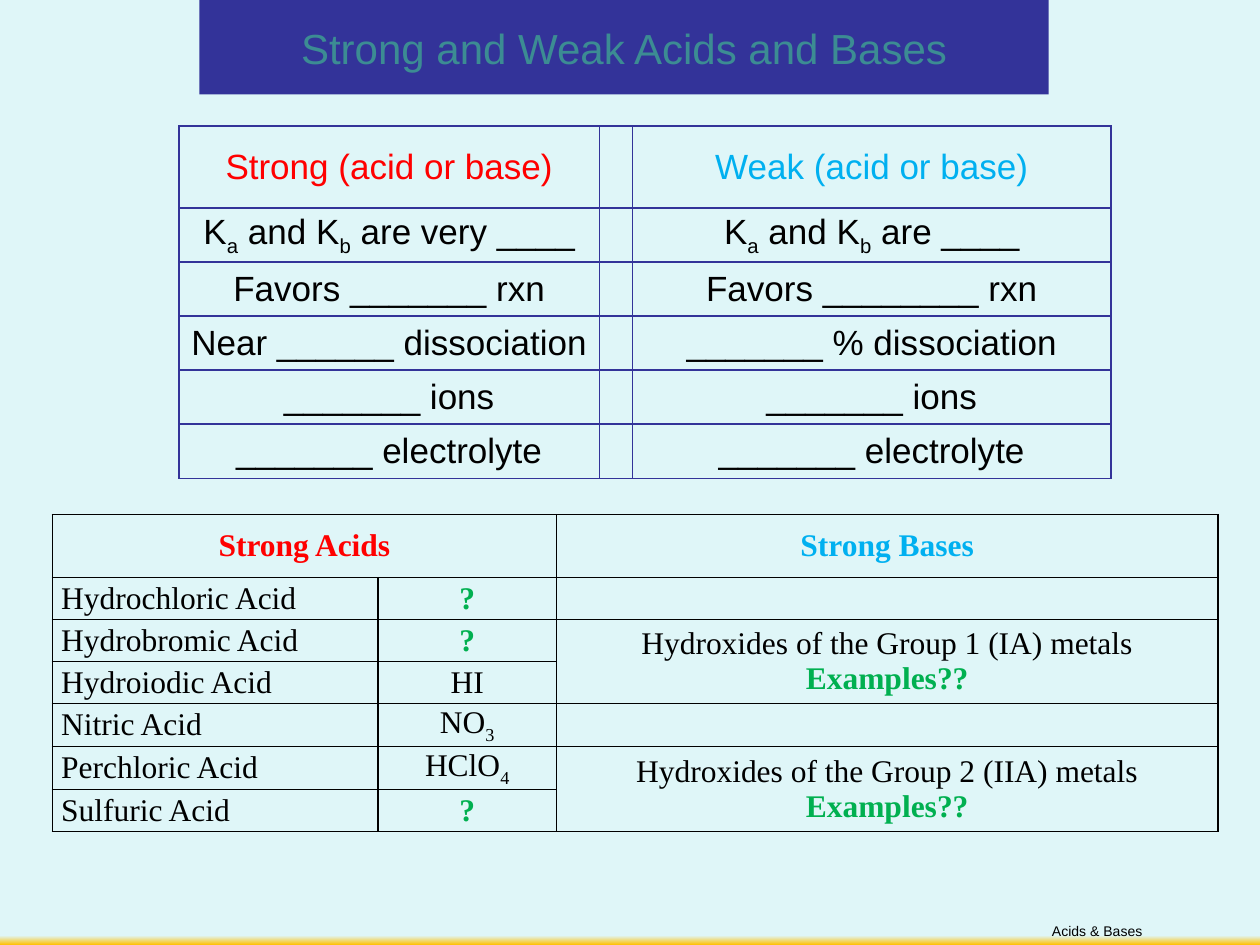
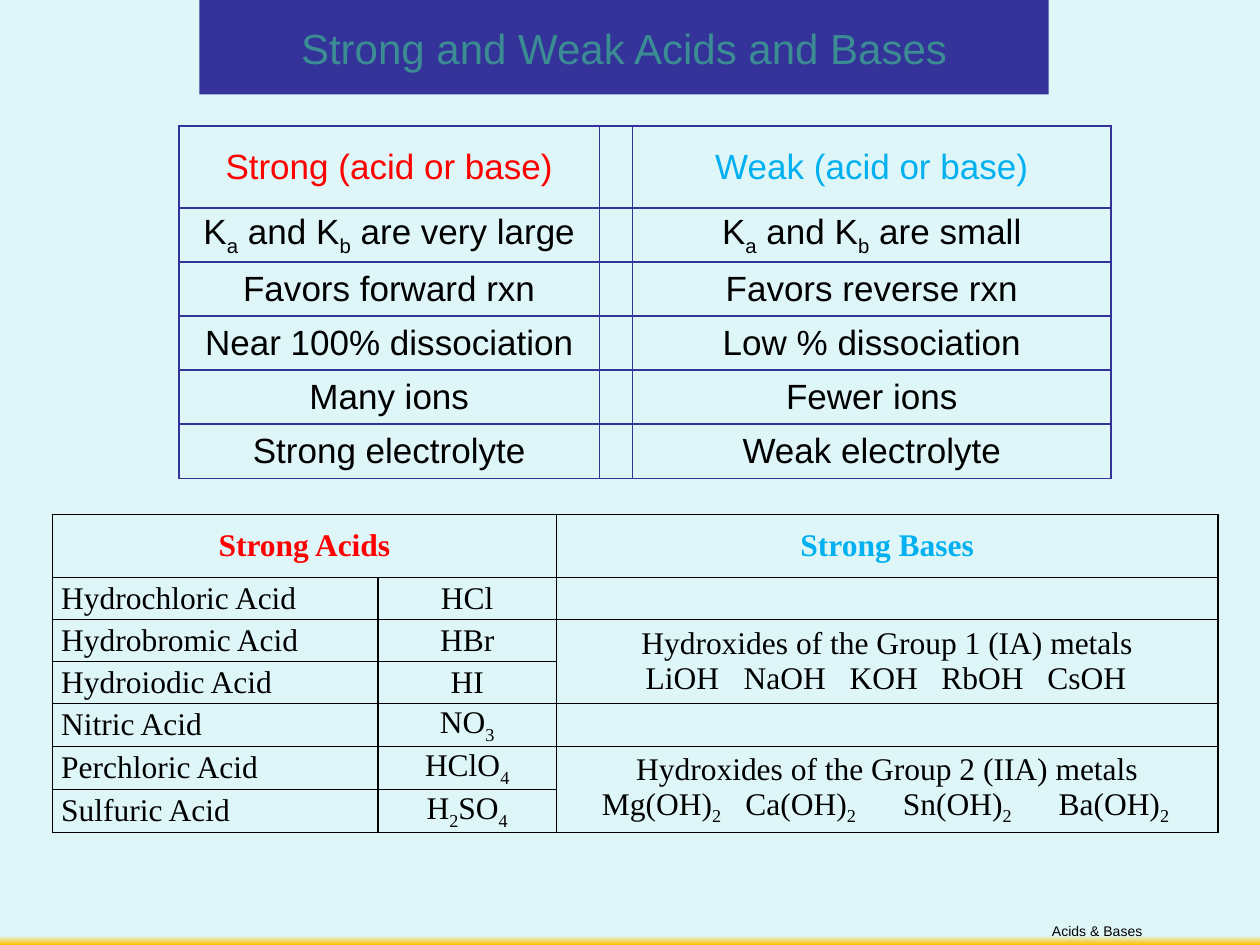
from lxml import etree
from pptx import Presentation
from pptx.dml.color import RGBColor
from pptx.enum.shapes import MSO_SHAPE
from pptx.enum.text import MSO_ANCHOR, PP_ALIGN
from pptx.oxml import parse_xml
from pptx.oxml.ns import nsdecls, qn
from pptx.util import Pt

BLACK, NAVY, TEAL = "000000", "333399", "3C8C93"
RED, BLUE, GREEN = "FF0000", "00B0F0", "00B050"
SANS, SERIF = "Arial", "Times New Roman"
rgb = RGBColor.from_string


def write_line(paragraph, text, font, size, color, align=PP_ALIGN.CENTER, bold=False, tabs=()):
    """Write one line; parts between bars are subscripts."""
    paragraph.alignment = align
    if tabs:
        tab_list = etree.SubElement(paragraph._p.get_or_add_pPr(), qn("a:tabLst"))
        for position in tabs:
            etree.SubElement(tab_list, qn("a:tab"), pos=str(Pt(position)), algn="l")
    paragraph.font.name = font
    paragraph.font.size = Pt(size)
    paragraph.font.bold = bold
    paragraph.font.color.rgb = rgb(color)
    for index, part in enumerate(text.split("|")):
        if part:
            run = paragraph.add_run()
            run.text = part
            if index % 2:
                run._r.get_or_add_rPr().set("baseline", "-25000")


def add_grid(slide, left, top, widths, heights, line_color):
    """Add an unfilled table with thin lines round every cell."""
    table = slide.shapes.add_table(len(heights), len(widths), Pt(left), Pt(top),
                                   Pt(sum(widths)), Pt(sum(heights))).table
    table.first_row = table.horz_banding = False
    for column, width in zip(table.columns, widths):
        column.width = Pt(width)
    for row, height in zip(table.rows, heights):
        row.height = Pt(height)
    for cell in table.iter_cells():
        cell.vertical_anchor = MSO_ANCHOR.MIDDLE
        cell.margin_left = cell.margin_right = Pt(5)
        cell.margin_top = cell.margin_bottom = 0
        for side in ("lnL", "lnR", "lnT", "lnB"):
            cell._tc.get_or_add_tcPr().append(parse_xml(
                f'<a:{side} {nsdecls("a")} w="{Pt(1)}"><a:solidFill>'
                f'<a:srgbClr val="{line_color}"/></a:solidFill></a:{side}>'))
        cell.fill.background()
    return table


# Wording: comparison rows, acid formulas and base examples with their tab stops
acids = ["Hydrochloric Acid", "Hydrobromic Acid", "Hydroiodic Acid",
         "Nitric Acid", "Perchloric Acid", "Sulfuric Acid"]
base_groups = [(2, "Hydroxides of the Group 1 (IA) metals"),
               (5, "Hydroxides of the Group 2 (IIA) metals")]
questions = {
    "comparison": [("K|a| and K|b| are very ____", "K|a| and K|b| are ____"),
                   ("Favors _______ rxn", "Favors ________ rxn"),
                   ("Near ______ dissociation", "_______ % dissociation"),
                   ("_______ ions", "_______ ions"),
                   ("_______ electrolyte", "_______ electrolyte")],
    "formulas": ["?", "?", "HI", "NO|3|", "HClO|4|", "?"],
    "bases": [("Examples??", ()), ("Examples??", ())],
}
answers = {
    "comparison": [("K|a| and K|b| are very large", "K|a| and K|b| are small"),
                   ("Favors forward rxn", "Favors reverse rxn"),
                   ("Near 100% dissociation", "Low % dissociation"),
                   ("Many ions", "Fewer ions"),
                   ("Strong electrolyte", "Weak electrolyte")],
    "formulas": ["HCl", "HBr", "HI", "NO|3|", "HClO|4|", "H|2|SO|4|"],
    "bases": [("\tLiOH\tNaOH\tKOH\tRbOH\tCsOH", (46, 102, 162.5, 215, 275.5)),
              ("\tMg(OH)|2|\tCa(OH)|2|\tSn(OH)|2|\tBa(OH)|2|", (21, 103, 193, 282))],
}

presentation = Presentation()
presentation.slide_width, presentation.slide_height = Pt(720), Pt(540)

for content in (questions, answers):
    slide = presentation.slides.add_slide(presentation.slide_layouts[6])

    # Background: pale blue with a gold edge at the bottom
    background = slide.background.fill
    background.gradient()
    background.gradient_angle = 270
    for stop, position, color in zip(background.gradient_stops, (0.99, 1), ("DFF6F8", "FFC000")):
        stop.position = position
        stop.color.rgb = rgb(color)

    # Footer
    footer = slide.shapes.add_textbox(Pt(324), Pt(516), Pt(336), Pt(24)).text_frame
    footer.word_wrap = True
    footer.vertical_anchor = MSO_ANCHOR.BOTTOM
    write_line(footer.paragraphs[0], "Acids & Bases", SANS, 8, BLACK, PP_ALIGN.RIGHT)

    # Comparison of strong and weak
    table = add_grid(slide, 102.2, 72, (240.5, 18.7, 273.6), [46.8] + [30.9] * 5, NAVY)
    headings = ("Strong (acid or base)", "Weak (acid or base)")
    for row, pair in enumerate([headings] + content["comparison"]):
        for column, text, heading_color in zip((0, 2), pair, (RED, BLUE)):
            write_line(table.cell(row, column).text_frame.paragraphs[0], text, SANS, 20,
                       BLACK if row else heading_color)

    # Title band
    band = slide.shapes.add_shape(MSO_SHAPE.RECTANGLE, Pt(114), 0, Pt(485.3), Pt(54))
    band.shadow.inherit = False
    band.fill.solid()
    band.fill.fore_color.rgb = rgb(NAVY)
    band.line.fill.background()
    band.text_frame.word_wrap = True
    band.text_frame.vertical_anchor = MSO_ANCHOR.MIDDLE
    write_line(band.text_frame.paragraphs[0], "Strong and Weak Acids and Bases", SANS, 24, TEAL)

    # Strong acids and bases
    table = add_grid(slide, 30, 294, (186, 102, 378), [36] + [24] * 6, BLACK)
    table.cell(0, 0).merge(table.cell(0, 1))
    for column, text, color in ((0, "Strong Acids", RED), (2, "Strong Bases", BLUE)):
        write_line(table.cell(0, column).text_frame.paragraphs[0], text, SERIF, 18, color, bold=True)
    for row, (acid, formula) in enumerate(zip(acids, content["formulas"]), start=1):
        write_line(table.cell(row, 0).text_frame.paragraphs[0], acid, SERIF, 18, BLACK, PP_ALIGN.LEFT)
        unknown = "?" in formula
        write_line(table.cell(row, 1).text_frame.paragraphs[0], formula, SERIF, 18,
                   GREEN if unknown else BLACK, bold=unknown)
    for (row, group), (examples, tabs) in zip(base_groups, content["bases"]):
        cell = table.cell(row, 2)
        cell.merge(table.cell(row + 1, 2))
        write_line(cell.text_frame.paragraphs[0], group, SERIF, 18, BLACK)
        unknown = "?" in examples
        write_line(cell.text_frame.add_paragraph(), examples, SERIF, 18,
                   GREEN if unknown else BLACK,
                   PP_ALIGN.LEFT if tabs else PP_ALIGN.CENTER, unknown, tabs)

presentation.save("out.pptx")
